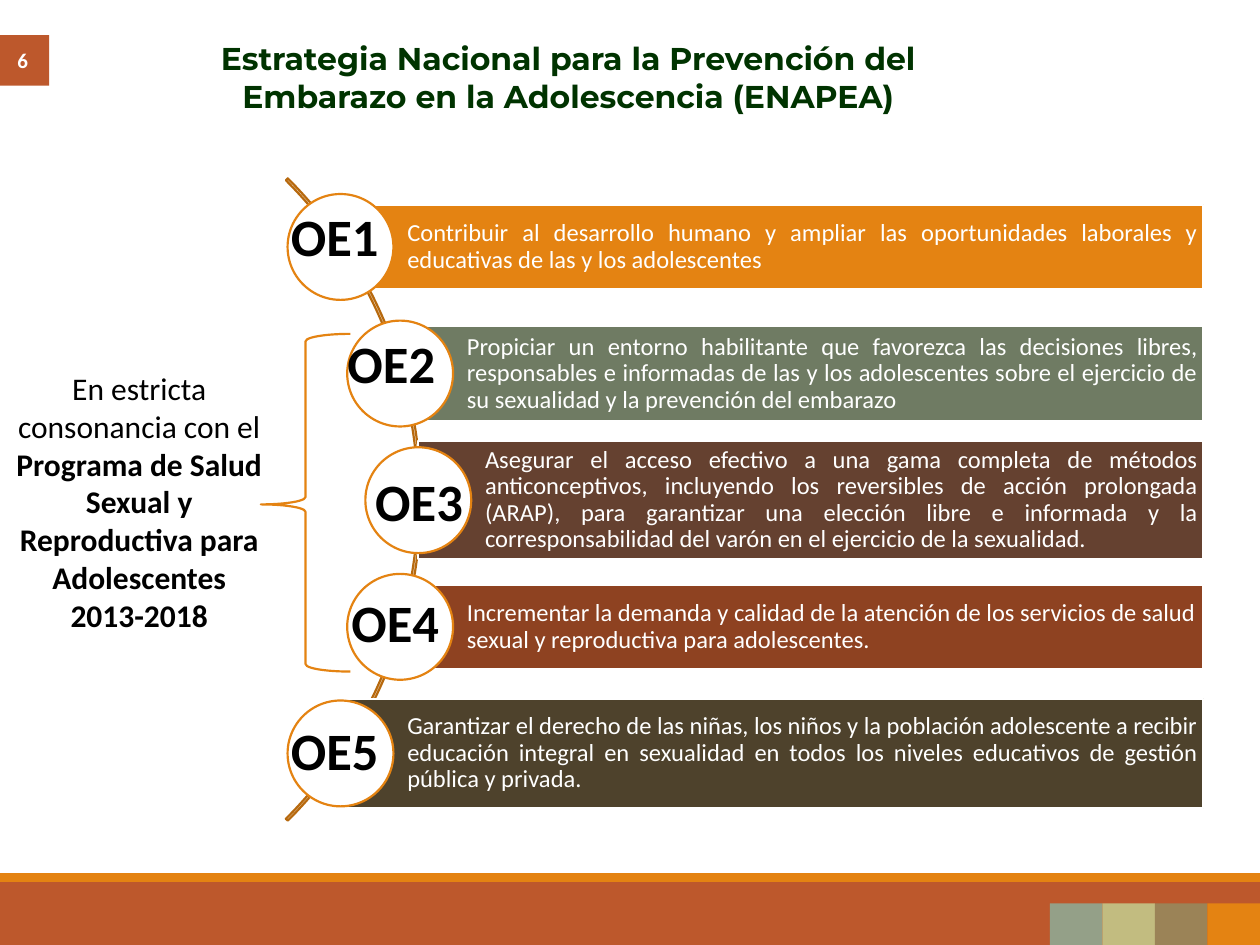
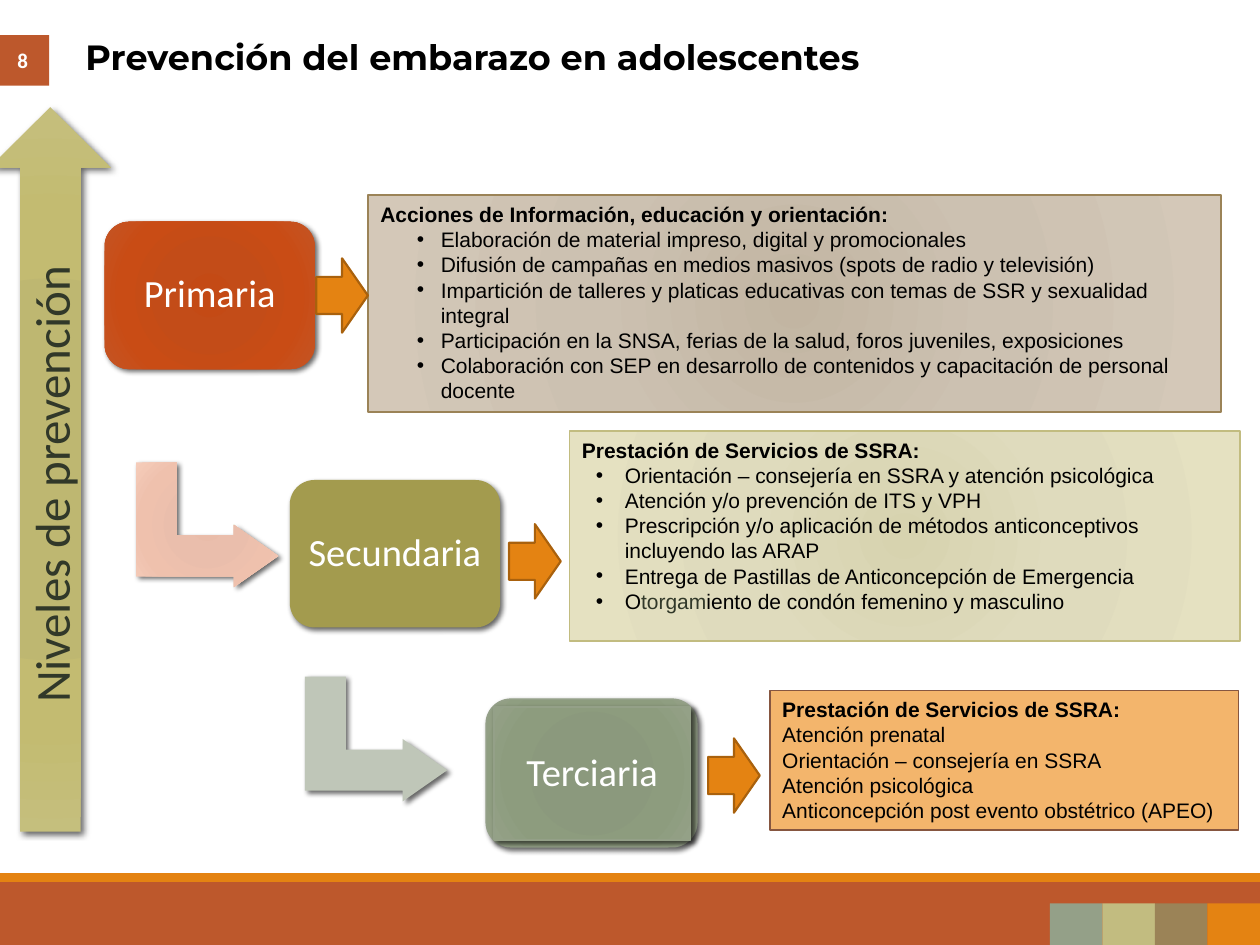
import math
from lxml import etree
from pptx import Presentation
from pptx.dml.color import RGBColor
from pptx.enum import shapes, text
from pptx.oxml import ns
from pptx.util import Inches, Pt

KIND = shapes.MSO_SHAPE
ALIGN = text.PP_ALIGN
ANCHOR = text.MSO_ANCHOR

WHITE, BLACK, DARK = "FFFFFF", "000000", "313829"
RUST, ORANGE, OCHRE, OLIVE, SAGE = "BD582C", "E48312", "9B8357", "C2BC80", "94A088"
BODY, TITLE, DETAIL = "Calibri", "Montserrat", "Arial"
FOOTER_SQUARES = [SAGE, OLIVE, OCHRE, ORANGE]

STRATEGY_TITLE = ["Estrategia Nacional para la Prevención del",
                  "Embarazo en la Adolescencia (ENAPEA)"]
OBJECTIVES = [
    ("OE1", (2.21, 1.57), ORANGE, 0.67, ALIGN.JUSTIFY,
     "Contribuir al desarrollo humano y ampliar las oportunidades laborales y "
     "educativas de las y los adolescentes"),
    ("OE2", (2.66, 2.58), "6F7B63", 0.75, ALIGN.JUSTIFY,
     "Propiciar un entorno habilitante que favorezca las decisiones libres, responsables e "
     "informadas de las y los adolescentes sobre el ejercicio de su sexualidad y la "
     "prevención del embarazo"),
    ("OE3", (2.88, 3.67), "654130", 0.94, ALIGN.JUSTIFY,
     "Asegurar el acceso efectivo a una gama completa de métodos anticonceptivos, "
     "incluyendo los reversibles de acción prolongada (ARAP), para garantizar una elección "
     "libre e informada y la corresponsabilidad del varón en el ejercicio de la sexualidad."),
    ("OE4", (2.69, 4.63), "8E4221", 0.67, ALIGN.LEFT,
     "Incrementar la demanda y calidad de la atención de los servicios de salud sexual y "
     "reproductiva para adolescentes."),
    ("OE5", (2.21, 5.65), "4E422C", 0.87, ALIGN.JUSTIFY,
     "Garantizar el derecho de las niñas, los niños y la población adolescente a recibir "
     "educación integral en sexualidad en todos los niveles educativos de gestión pública "
     "y privada."),
]
PROGRAM = [("En estricta consonancia con el ", False),
           ("Programa de Salud Sexual y Reproductiva para Adolescentes 2013-2018", True)]

PREVENTION_TITLE = "Prevención del embarazo en adolescentes"
AXIS = "Niveles de prevención"
AXIS_FILL = [(0, "BEB76E"), (34, "BEB771"), (70, "C3BB71"), (100, "C5BF7D")]
TERTIARY_FILL = [(0, "8A987B"), (34, "8B997D"), (70, "8D9C7E"), (100, "94A187")]
LEVELS = [
    {"name": "Primaria", "at": (0.83, 1.76), "arrow": (2.51, 2.05), "framed": False,
     "fill": [(0, "C44A15"), (34, "C34C18"), (70, "C94C15"), (100, "C45525")],
     "panel": (2.92, 1.55, 6.77, 1.72), "border": OCHRE, "indent": 0.48,
     "panel_fill": [(0, "C2B5A2"), (45, "CCC1B1"), (100, "D4C8B8")],
     "heading": "Acciones de Información, educación y orientación:",
     "items": ["Elaboración de material impreso, digital y promocionales",
               "Difusión de campañas en medios masivos (spots de radio y televisión)",
               "Impartición de talleres y platicas educativas con temas de SSR y "
               "sexualidad integral",
               "Participación en la SNSA, ferias de la salud, foros juveniles, exposiciones",
               "Colaboración con SEP en desarrollo de contenidos y capacitación de "
               "personal docente"]},
    {"name": "Secundaria", "at": (2.3, 3.81), "arrow": (4.04, 4.16), "framed": False,
     "fill": "A39B4E",
     "panel": (4.52, 3.42, 5.32, 1.67), "border": OLIVE, "indent": 0.34,
     "panel_fill": [(0, "D7D3AF"), (45, "DFDBBD"), (100, "E5E1C1")],
     "heading": "Prestación de Servicios de SSRA:",
     "items": ["Orientación – consejería en SSRA y atención psicológica",
               "Atención y/o prevención de ITS y VPH",
               "Prescripción y/o aplicación de métodos anticonceptivos incluyendo las ARAP",
               "Entrega de Pastillas de Anticoncepción de Emergencia",
               [("O", BLACK), ("torgam", DARK),
                ("iento de condón femenino y masculino", BLACK)]]},
    {"name": "Terciaria", "at": (3.86, 5.55), "arrow": (5.62, 5.86), "framed": True,
     "fill": TERTIARY_FILL,
     "panel": (6.11, 5.48, 3.72, 1.11), "border": "865640", "indent": 0,
     "panel_fill": "F3B56C",
     "heading": "Prestación de Servicios de SSRA:",
     "items": ["Atención prenatal", "Orientación – consejería en SSRA",
               "Atención psicológica", "Anticoncepción post evento obstétrico (APEO)"]},
]
STEPS = [((1.15, 3.6), [(0, "E9BCA9"), (34, "EABEAC"), (70, "EFC1AD"), (100, "F5CCBA")]),
         ((2.49, 5.3), "BFC6B8")]


def color(value):
    return RGBColor.from_string(value)


def child(parent, tag, **attributes):
    node = etree.SubElement(parent, ns.qn(tag))
    for key, value in attributes.items():
        node.set(key, str(value))
    return node


def paint(shape, fill):
    if fill is None:
        shape.fill.background()
    elif isinstance(fill, str):
        shape.fill.solid()
        shape.fill.fore_color.rgb = color(fill)
    else:
        gradient = etree.Element(ns.qn("a:gradFill"), rotWithShape="1")
        stops = child(gradient, "a:gsLst")
        for position, value in fill:
            stop = child(stops, "a:gs", pos=position * 1000)
            child(stop, "a:srgbClr", val=value)
        spread = child(gradient, "a:path", path="circle")
        child(spread, "a:fillToRect", l=100000, t=100000, r=100000, b=100000)
        shape.element.spPr.find(ns.qn("a:prstGeom")).addnext(gradient)


def cast_shadow(shape, blur):
    effects = shape.element.spPr.find(ns.qn("a:effectLst"))
    shadow = child(effects, "a:outerShdw", blurRad=Pt(blur), dist=Pt(2),
                   dir=45 * 60000, algn="tl", rotWithShape=0)
    child(child(shadow, "a:srgbClr", val=BLACK), "a:alpha", val=60000)


def draw(page, kind, at, fill=None, line=None, width=1.25, adjust=(), shadow=0):
    shape = page.shapes.add_shape(kind, *map(Inches, at))
    for index, value in enumerate(adjust):
        shape.adjustments[index] = value
    shape.shadow.inherit = False
    if line:
        shape.line.color.rgb = color(line)
        shape.line.width = Pt(width)
    else:
        shape.line.fill.background()
    paint(shape, fill)
    if shadow:
        cast_shadow(shape, shadow)
    return shape


def set_frame(shape, anchor, insets=(0.1, 0.05, 0.1, 0.05)):
    frame = shape.text_frame
    frame.word_wrap = True
    frame.vertical_anchor = anchor
    (frame.margin_left, frame.margin_top,
     frame.margin_right, frame.margin_bottom) = map(Inches, insets)
    return frame


def add_span(para, words, size, font, ink, bold=False):
    span = para.add_run()
    span.text = words
    span.font.size = Pt(size)
    span.font.name = font
    span.font.bold = bold
    span.font.color.rgb = color(ink)


def next_para(frame, first, align=ALIGN.LEFT):
    para = frame.paragraphs[0] if first else frame.add_paragraph()
    para.alignment = align
    return para


def write(shape, lines, size, font, ink, bold=False, align=ALIGN.LEFT,
          anchor=ANCHOR.TOP, insets=(0.1, 0.05, 0.1, 0.05), spacing=None):
    frame = set_frame(shape, anchor, insets)
    for index, line in enumerate(lines):
        para = next_para(frame, index == 0, align)
        if spacing:
            para.line_spacing = spacing
        add_span(para, line, size, font, ink, bold)


def text_box(page, at, lines, *style, **layout):
    write(page.shapes.add_textbox(*map(Inches, at)), lines, *style, **layout)


def add_page(deck, number):
    page = deck.slides.add_slide(deck.slide_layouts[6])
    draw(page, KIND.RECTANGLE, (0, 7, 10, 0.5), RUST)
    draw(page, KIND.RECTANGLE, (0, 6.93, 10, 0.07), ORANGE)
    draw(page, KIND.RECTANGLE, (-0.03, 0.28, 0.42, 0.4), RUST)
    text_box(page, (-0.03, 0.33, 0.42, 0.3), [number], 12, BODY, WHITE, True,
             align=ALIGN.CENTER)
    side = 5 / 12
    for index, fill in enumerate(FOOTER_SQUARES):
        left = 10 - side * (len(FOOTER_SQUARES) - index)
        draw(page, KIND.RECTANGLE, (left, 7.17, side, 0.33), fill)
    return page


def add_strategy(deck):
    page = add_page(deck, "6")
    text_box(page, (0.02, 0.26, 8.98, 0.71), STRATEGY_TITLE, 18, TITLE, "003300", True,
             align=ALIGN.CENTER)
    draw(page, KIND.BLOCK_ARC, (-3.87, 0.36, 7.21, 7.21), line="B7690E",
         adjust=(189, 27, 0.003))
    arc_x, arc_y, radius, step, circle, right = -0.26, 3.97, 3.58, 1.0, 0.84, 9.55
    step += 0.005
    for index, (label, place, fill, height, align, goal) in enumerate(OBJECTIVES):
        drop = (index - 2) * step
        x, y = arc_x + math.sqrt(radius ** 2 - drop ** 2), arc_y + drop
        bar = draw(page, KIND.RECTANGLE, (x, y - height / 2, right - x, height), fill, WHITE)
        write(bar, [goal], 14, BODY, WHITE, align=align, anchor=ANCHOR.MIDDLE,
              insets=(0.53, 0.04, 0.04, 0.04), spacing=0.9)
        draw(page, KIND.OVAL, (x - circle / 2, y - circle / 2, circle, circle), WHITE, ORANGE)
        text_box(page, (*place, 1.34, 0.61), [label], 30, BODY, BLACK, True)
    draw(page, KIND.LEFT_BRACE, (2.07, 2.65, 0.71, 2.68), line=ORANGE, adjust=(0.083, 0.505))
    program = page.shapes.add_textbox(*map(Inches, (0.03, 2.88, 2.15, 2.22)))
    para = next_para(set_frame(program, ANCHOR.TOP), True, ALIGN.CENTER)
    for words, bold in PROGRAM:
        add_span(para, words, 18, BODY, BLACK, bold)


def add_bullet(para, indent):
    properties = para._p.get_or_add_pPr()
    properties.set("marL", str(Inches(indent)))
    properties.set("indent", str(Inches(0.11 - 0.3 if indent > 0.4 else -0.23)))
    child(properties, "a:buFont", typeface=DETAIL)
    child(properties, "a:buChar", char="•")


def add_panel(page, level):
    panel = draw(page, KIND.RECTANGLE, level["panel"], level["panel_fill"], level["border"], 1)
    frame = set_frame(panel, ANCHOR.TOP)
    add_span(next_para(frame, True), level["heading"], 12, DETAIL, BLACK, True)
    for item in level["items"]:
        para = next_para(frame, False)
        if level["indent"]:
            add_bullet(para, level["indent"])
        for words, ink in [(item, BLACK)] if isinstance(item, str) else item:
            add_span(para, words, 12, DETAIL, ink)


def add_level(page, level):
    x, y = level["at"]
    border = SAGE if level["framed"] else None
    box = draw(page, KIND.ROUNDED_RECTANGLE, (x, y, 1.67, 1.17), level["fill"], border, 1,
               (0.167,), 3)
    if level["framed"]:
        box = draw(page, KIND.RECTANGLE, (x + 0.06, y + 0.06, 1.56, 1.06), level["fill"],
                   border, 1, shadow=3)
    write(box, [level["name"]], 22, BODY, WHITE, align=ALIGN.CENTER, anchor=ANCHOR.MIDDLE,
          insets=(0.04,) * 4, spacing=0.9)


def add_prevention(deck):
    page = add_page(deck, "8")
    text_box(page, (0.58, 0.2, 8.07, 0.49), [PREVENTION_TITLE], 20, TITLE, BLACK, True,
             anchor=ANCHOR.MIDDLE)
    axis = draw(page, KIND.UP_ARROW, (-0.08, 0.85, 0.96, 5.75), AXIS_FILL, shadow=3.5)
    write(axis, [AXIS], 28, BODY, DARK, align=ALIGN.CENTER, anchor=ANCHOR.MIDDLE)
    axis.text_frame._txBody.bodyPr.set("vert", "vert270")
    for place, fill in STEPS:
        bend = draw(page, KIND.BENT_UP_ARROW, (*place, 0.99, 1.13), fill,
                    adjust=(0.328, 0.25, 0.358), shadow=3)
        bend.rotation = 90
    for level in LEVELS:
        add_level(page, level)
        add_panel(page, level)
        draw(page, KIND.RIGHT_ARROW, (*level["arrow"], 0.41, 0.59), ORANGE, "A9610D")


def main():
    deck = Presentation()
    deck.slide_width, deck.slide_height = Inches(10), Inches(7.5)
    add_strategy(deck)
    add_prevention(deck)
    deck.save("out.pptx")


if __name__ == "__main__":
    main()
